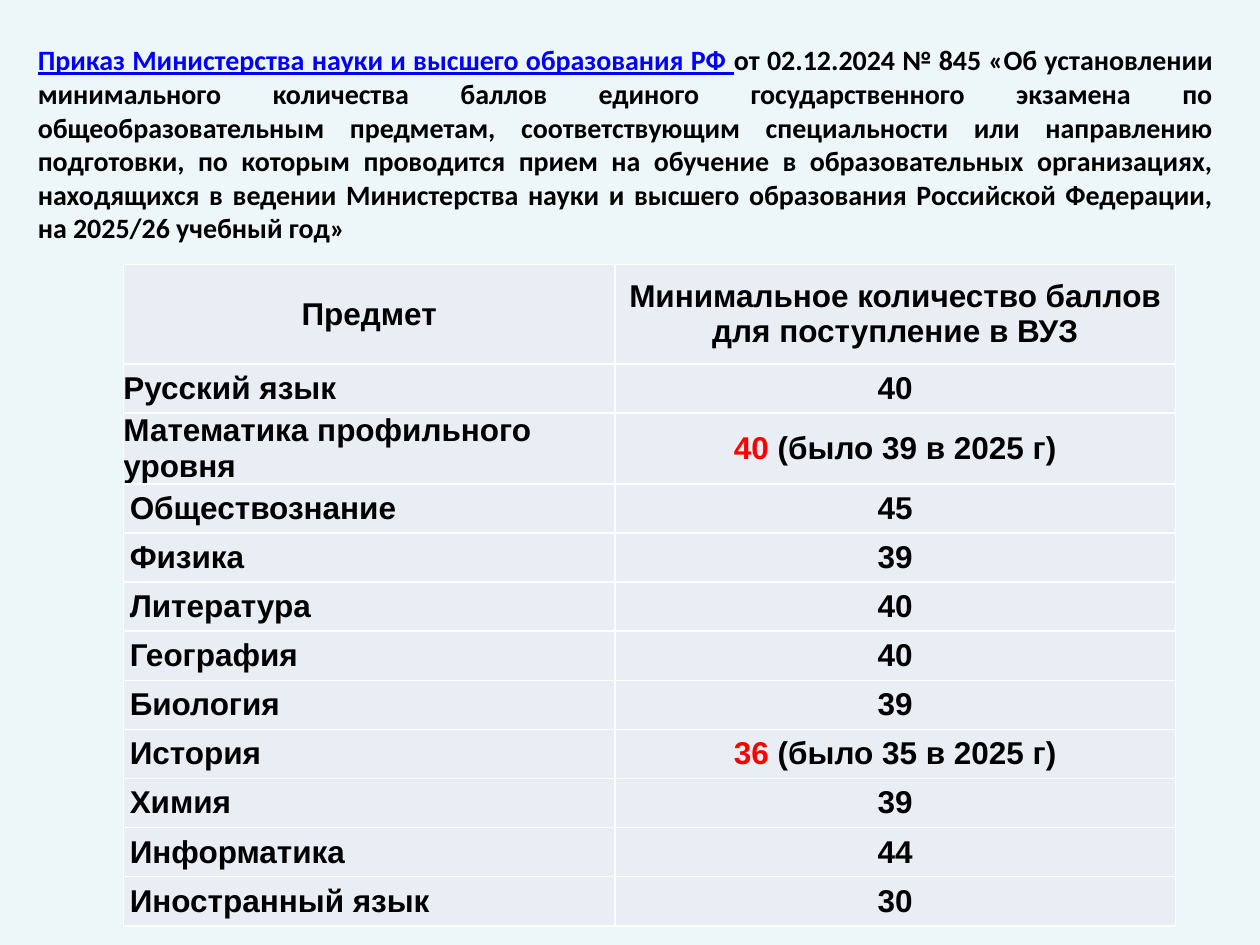
from lxml.etree import SubElement
from pptx import Presentation
from pptx.dml.color import RGBColor
from pptx.enum.text import MSO_ANCHOR, MSO_AUTO_SIZE, PP_ALIGN
from pptx.oxml.ns import qn
from pptx.util import Inches, Pt

BACKGROUND = RGBColor(0xED, 0xF6, 0xF9)
CELL_FILL = RGBColor(0xE9, 0xED, 0xF4)
BLACK = RGBColor(0x00, 0x00, 0x00)
LINK_BLUE = RGBColor(0x00, 0x00, 0xFF)
RED = RGBColor(0xFF, 0x00, 0x00)

HEADERS = ("Предмет", "Минимальное количество баллов для поступление в ВУЗ")
# subject, minimum score, note on a score that has changed
SCORES = [
    ("Русский язык", "40", ""),
    ("Математика профильного уровня", "40", "(было 39 в 2025 г)"),
    ("Обществознание", "45", ""),
    ("Физика", "39", ""),
    ("Литература", "40", ""),
    ("География", "40", ""),
    ("Биология", "39", ""),
    ("История", "36", "(было 35 в 2025 г)"),
    ("Химия", "39", ""),
    ("Информатика", "44", ""),
    ("Иностранный язык", "30", ""),
]
# cells without inner margins, as (row, column)
TIGHT_CELLS = {(0, 1), (1, 0), (2, 0)}


def add_text(paragraph, text, font="Arial", size=18, color=BLACK, underline=None):
    run = paragraph.add_run()
    run.text = text
    run.font.name = font
    run.font.size = Pt(size)
    run.font.bold = True
    run.font.underline = underline
    run.font.color.rgb = color


def add_white_borders(cell):
    properties = cell._tc.get_or_add_tcPr()
    for side in ("a:lnL", "a:lnR", "a:lnT", "a:lnB"):
        line = SubElement(properties, qn(side), w=str(Pt(1)))
        SubElement(SubElement(line, qn("a:solidFill")), qn("a:srgbClr"), val="FFFFFF")


presentation = Presentation()
presentation.slide_width = Inches(10)
presentation.slide_height = Inches(7.5)
slide = presentation.slides.add_slide(presentation.slide_layouts[1])
slide.background.fill.solid()
slide.background.fill.fore_color.rgb = BACKGROUND
title = slide.shapes.title
title.element.getparent().remove(title.element)

# The ministry's order
order = slide.placeholders[1]
order.left, order.top = Inches(0.2), Inches(0.29)
order.width, order.height = Inches(9.53), Inches(1.59)
order.text_frame.auto_size = MSO_AUTO_SIZE.NONE
paragraph = order.text_frame.paragraphs[0]
paragraph.alignment = PP_ALIGN.JUSTIFY
paragraph.space_before = Pt(0)
paragraph_properties = paragraph._p.get_or_add_pPr()
paragraph_properties.set("marL", "0")
paragraph_properties.set("indent", "0")
SubElement(paragraph_properties, qn("a:buNone"))
add_text(paragraph, "Приказ Министерства науки и высшего образования РФ ",
         font="Calibri", size=16, color=LINK_BLUE, underline=True)
add_text(paragraph,
         "от 02.12.2024 № 845 «Об установлении минимального количества баллов "
         "единого государственного экзамена по общеобразовательным предметам, "
         "соответствующим специальности или направлению подготовки, по которым "
         "проводится прием на обучение в образовательных организациях, находящихся "
         "в ведении Министерства науки и высшего образования Российской Федерации, "
         "на 2025/26 учебный год»",
         font="Calibri", size=16)

# Minimum scores
table = slide.shapes.add_table(
    len(SCORES) + 1, 2, Inches(0.98), Inches(2.1), Inches(8.35), Inches(5.08)).table
table.first_row = False
table.horz_banding = False
table.columns[0].width = Inches(3.9)
table.columns[1].width = Inches(4.45)
for row_index, row in enumerate(table.rows):
    row.height = Inches(0.39 if row_index else 0.79)
    for column_index, cell in enumerate(row.cells):
        tight = (row_index, column_index) in TIGHT_CELLS
        cell.margin_left = cell.margin_right = Inches(0 if tight else 0.05)
        cell.margin_top = cell.margin_bottom = Inches(0 if tight else 0.03)
        cell.vertical_anchor = MSO_ANCHOR.MIDDLE
        add_white_borders(cell)
        cell.fill.solid()
        cell.fill.fore_color.rgb = CELL_FILL

        paragraph = cell.text_frame.paragraphs[0]
        is_subject = row_index > 0 and column_index == 0
        paragraph.alignment = PP_ALIGN.LEFT if is_subject else PP_ALIGN.CENTER
        if row_index == 0:
            add_text(paragraph, HEADERS[column_index])
            continue
        subject, score, note = SCORES[row_index - 1]
        if is_subject:
            add_text(paragraph, subject)
        elif note:
            add_text(paragraph, score + " ", color=RED)
            add_text(paragraph, note)
        else:
            add_text(paragraph, score)

presentation.save("out.pptx")
